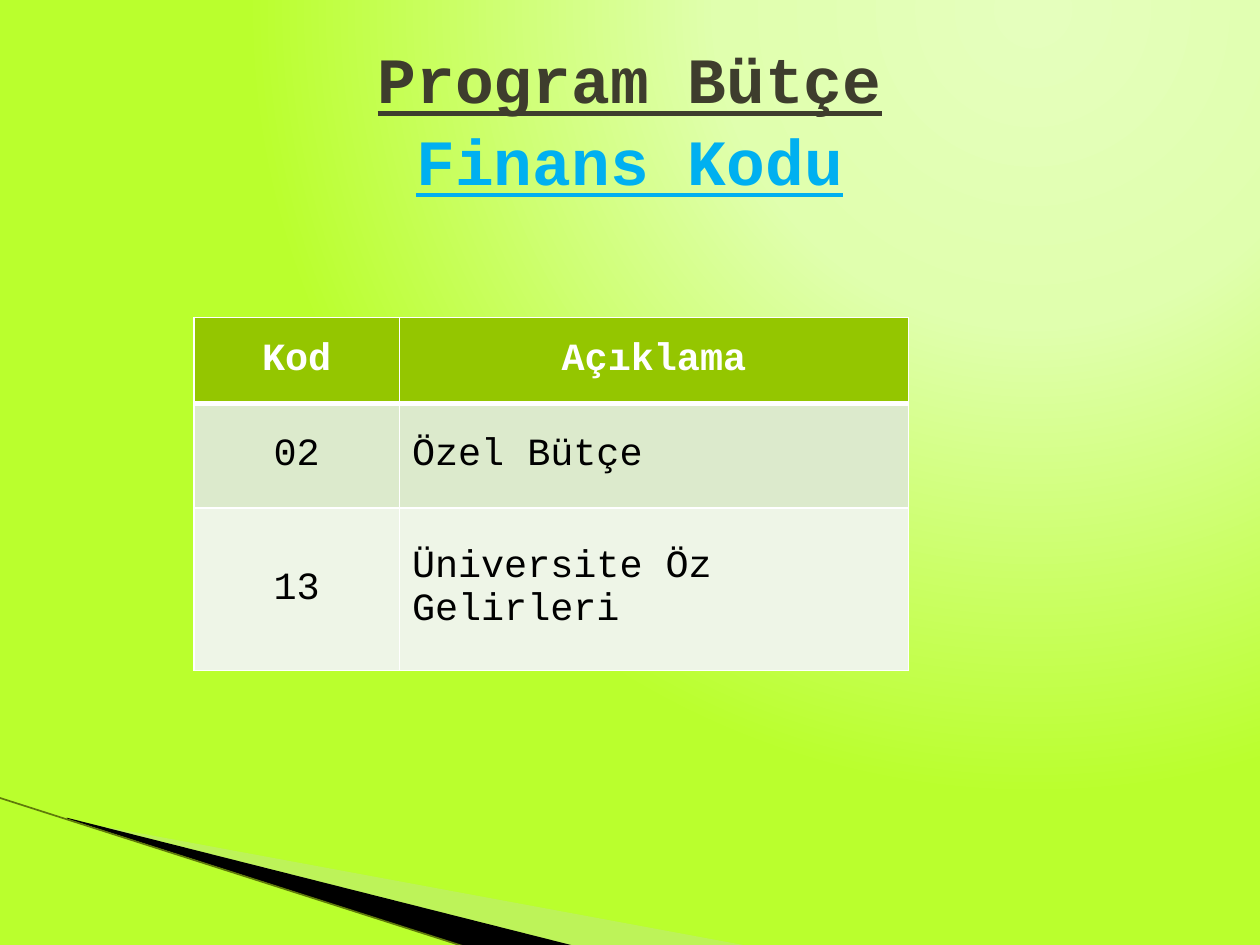
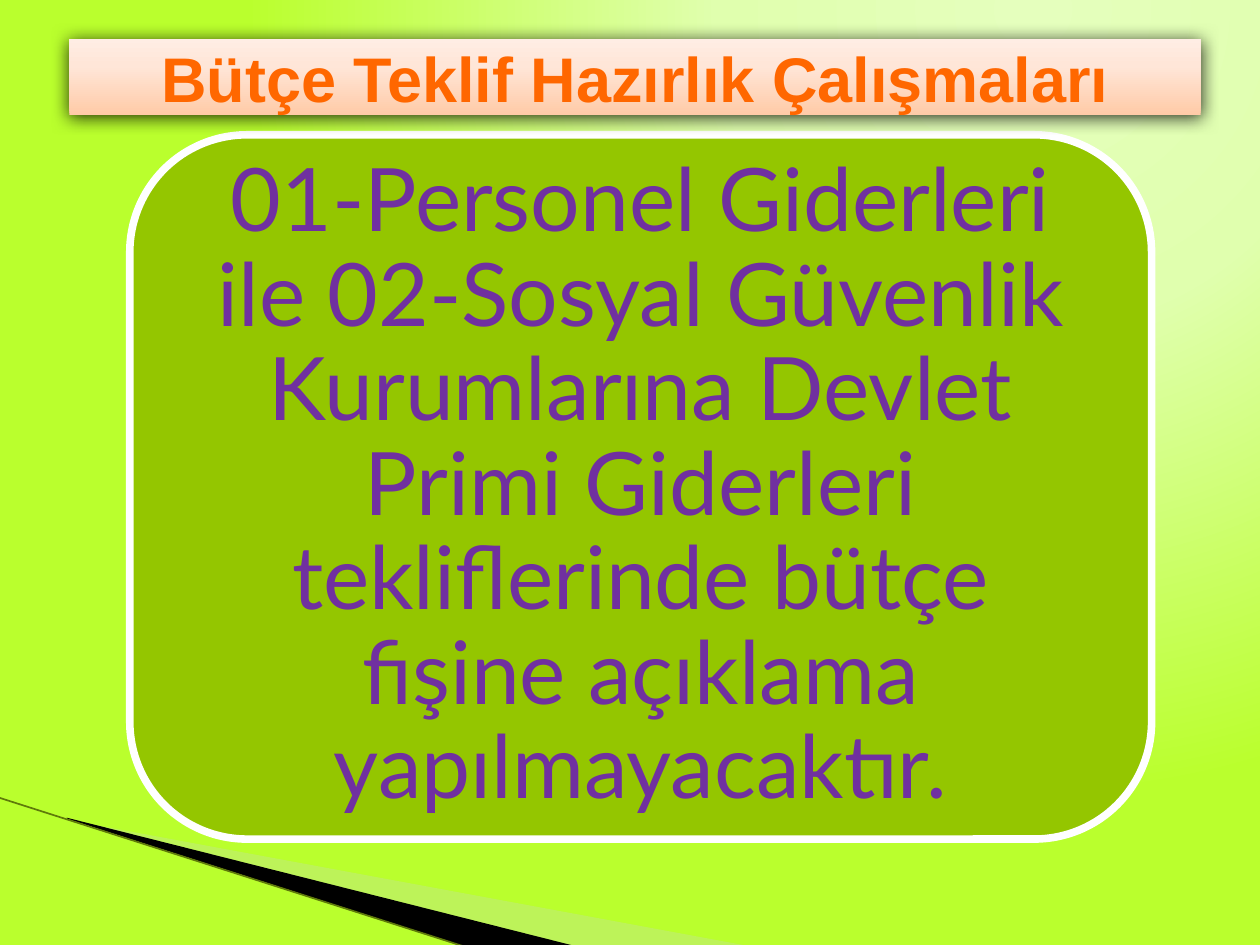
from lxml import etree
from pptx import Presentation
from pptx.dml.color import RGBColor
from pptx.enum.shapes import MSO_CONNECTOR, MSO_SHAPE
from pptx.enum.text import MSO_ANCHOR, MSO_AUTO_SIZE, PP_ALIGN
from pptx.oxml import parse_xml
from pptx.oxml.ns import qn
from pptx.util import Inches, Pt

CENTER, LEFT = PP_ALIGN.CENTER, PP_ALIGN.LEFT
MIDDLE = MSO_ANCHOR.MIDDLE
NO_FIT = MSO_AUTO_SIZE.NONE
ROUNDED = MSO_SHAPE.ROUNDED_RECTANGLE
STRAIGHT = MSO_CONNECTOR.STRAIGHT
DRAWING_NS = "http://schemas.openxmlformats.org/drawingml/2006/main"
WIDTH, HEIGHT = Inches(10), Inches(7.5)
TITLE_ONLY = 5

COLORS = {
    "glow": "E5FFBD", "glow_edge": "E0FFAE", "lime": "BAFF2D",
    "wedge": "C3E19D", "black": "000000", "rule": "5F7A0A",
    "green": "94C600", "band": "DCEACC", "pale": "EEF5E7",
    "white": "FFFFFF", "dark": "3E3D2D", "blue": "00B0F0",
    "orange": "FF6700", "purple": "7030A0",
    "peach": "FFCBA8", "peach_mid": "FFE6D8", "peach_light": "FFEDE4",
}
BACKGROUND_STOPS = [(0, "glow"), (40, "glow_edge"), (100, "lime")]
BANNER_STOPS = [(0, "peach"), (65, "peach_mid"), (100, "peach_light")]
WEDGES = [
    ("wedge", 40, [(5.5, 86.8), (59.5, 100.13), (45.6, 100.13), (5.5, 86.67)]),
    ("black", 100, [(5.3, 86.53), (45.7, 100.13), (37.2, 100.27), (5.4, 86.67)]),
]
CODES = [("Kod", "Açıklama"), ("02", "Özel Bütçe"), ("13", "Üniversite Öz Gelirleri")]
CODE_COLUMNS = [16.3, 40.4]
CODE_ROWS = [9.07, 11.07, 17.2]
CODE_FILLS = ["green", "band", "pale"]


def color(name):
    return RGBColor.from_string(COLORS[name])


def across(percent):
    return round(WIDTH * percent / 100)


def down(percent):
    return round(HEIGHT * percent / 100)


def area(left, top, width, height):
    return across(left), down(top), across(width), down(height)


def place(shape, box):
    shape.left, shape.top, shape.width, shape.height = box


def add_child(parent, tag, **attributes):
    values = {key: str(value) for key, value in attributes.items()}
    return etree.SubElement(parent, qn(tag), values)


def set_gradient(fill, holder, stops, direction):
    fill.gradient()
    gradient = holder.find(".//" + qn("a:gradFill"))
    stop_xml = "".join(
        f'<a:gs pos="{position * 1000}"><a:srgbClr val="{COLORS[name]}"/></a:gs>'
        for position, name in stops)
    gradient.getparent().replace(gradient, parse_xml(
        f'<a:gradFill xmlns:a="{DRAWING_NS}" rotWithShape="1">'
        f"<a:gsLst>{stop_xml}</a:gsLst>{direction}</a:gradFill>"))


def format_font(font, size, name, tint, bold=False, underline=False):
    font.size, font.name, font.bold = Pt(size), name, bold
    font.underline = underline
    font.color.rgb = color(tint)


def move_to_master(deck, shapes):
    tree = deck.slide_master.shapes.element
    for number, shape in enumerate(shapes, 100):
        shape.element.xpath(".//p:cNvPr")[0].set("id", str(number))
        tree.append(shape.element)


def build_master(deck, page):
    master = deck.slide_master
    set_gradient(master.background.fill, master.element, BACKGROUND_STOPS,
                 '<a:path path="circle"><a:fillToRect l="65000" t="0" r="0" b="98000"/></a:path>')
    decorations = []
    for tint, opacity, corners in WEDGES:
        points = [(across(x), down(y)) for x, y in corners]
        builder = page.shapes.build_freeform(*points[0])
        builder.add_line_segments(points[1:])
        wedge = builder.convert_to_shape()
        wedge.shadow.inherit = False
        wedge.fill.solid()
        wedge.fill.fore_color.rgb = color(tint)
        wedge.line.fill.background()
        tint_node = wedge.element.spPr.find(qn("a:solidFill"))[0]
        add_child(tint_node, "a:alpha", val=opacity * 1000)
        decorations.append(wedge)
    rule = page.shapes.add_connector(
        STRAIGHT, across(-0.1), down(84.4), across(37.1), down(100.27))
    rule.line.color.rgb = color("rule")
    rule.line.width = Pt(0.95)
    add_child(rule.element.spPr, "a:effectLst")
    move_to_master(deck, decorations + [rule])


def add_title(page, text, box, size, font_name, tints, underline=False):
    title = page.shapes.title
    place(title, box)
    frame = title.text_frame
    frame.text = text
    frame.auto_size, frame.word_wrap = NO_FIT, True
    frame.vertical_anchor = MIDDLE
    para = frame.paragraphs[0]
    para.alignment = CENTER
    for span, tint in zip(para.runs, tints):
        format_font(span.font, size, font_name, tint, True, underline)
    return title


def set_borders(cell, row):
    properties = cell._tc.get_or_add_tcPr()
    widths = {"L": 1, "R": 1, "T": 3 if row == 1 else 1, "B": 3 if row == 0 else 1}
    for side, width in widths.items():
        line = add_child(properties, f"a:ln{side}", w=Pt(width))
        add_child(add_child(line, "a:solidFill"), "a:srgbClr", val=COLORS["white"])


def add_code_table(page):
    box = area(15.4, 33.6, sum(CODE_COLUMNS), sum(CODE_ROWS))
    table = page.shapes.add_table(len(CODES), len(CODE_COLUMNS), *box).table
    for column, width in zip(table.columns, CODE_COLUMNS):
        column.width = across(width)
    for row, height in zip(table.rows, CODE_ROWS):
        row.height = down(height)
    for row, texts in enumerate(CODES):
        header = row == 0
        for column, text in enumerate(texts):
            cell = table.cell(row, column)
            set_borders(cell, row)
            cell.fill.solid()
            cell.fill.fore_color.rgb = color(CODE_FILLS[row])
            cell.vertical_anchor = MIDDLE
            cell.text_frame.text = text
            para = cell.text_frame.paragraphs[0]
            para.alignment = CENTER if header or column == 0 else LEFT
            format_font(para.runs[0].font, 22, "Courier New",
                        "white" if header else "black", header)


def add_statement(page, text):
    panel = page.shapes.add_shape(ROUNDED, *area(10.3, 14.27, 81.1, 74.53))
    panel.shadow.inherit = False
    panel.fill.solid()
    panel.fill.fore_color.rgb = color("green")
    panel.line.color.rgb = color("white")
    panel.line.width = Pt(4.33)
    frame = panel.text_frame
    frame.text = text
    frame.word_wrap = True
    frame.vertical_anchor = MIDDLE
    frame.margin_left = frame.margin_right = Inches(0.21)
    frame.margin_top = frame.margin_bottom = Inches(0.1)
    para = frame.paragraphs[0]
    para.alignment = CENTER
    para.line_spacing = 0.9
    format_font(para.runs[0].font, 50, "Lato", "purple")


def style_banner(title):
    set_gradient(title.fill, title.element.spPr, BANNER_STOPS,
                 '<a:lin ang="16200000" scaled="0"/>')
    effects = add_child(title.element.spPr, "a:effectLst")
    shadow = add_child(effects, "a:outerShdw", blurRad=Pt(10), dist=Pt(1),
                       dir=5400000, algn="ctr", rotWithShape=0)
    tint = add_child(shadow, "a:srgbClr", val=COLORS["black"])
    add_child(tint, "a:alpha", val=80000)


def build_finance_page(page):
    title = add_title(page, "Program Bütçe\vFinans Kodu", area(5, 4, 90, 16.67),
                      36.9, "Courier New", ["dark", "blue"], underline=True)
    title.text_frame.paragraphs[0].line_spacing = 1.05
    add_code_table(page)


def build_proposal_page(page):
    add_statement(page, "01-Personel Giderleri ile 02-Sosyal Güvenlik Kurumlarına "
                  "Devlet Primi Giderleri tekliflerinde bütçe fişine açıklama "
                  "yapılmayacaktır.")
    title = add_title(page, "Bütçe Teklif Hazırlık Çalışmaları",
                      area(5.5, 4.13, 89.8, 8), 36, "Arial", ["orange"])
    style_banner(title)
    page.shapes.element.append(title.element)


def main():
    deck = Presentation()
    deck.slide_width, deck.slide_height = WIDTH, HEIGHT
    layout = deck.slide_layouts[TITLE_ONLY]
    finance_page, proposal_page = [deck.slides.add_slide(layout) for _ in range(2)]
    build_master(deck, finance_page)
    build_finance_page(finance_page)
    build_proposal_page(proposal_page)
    deck.save("out.pptx")


if __name__ == "__main__":
    main()
